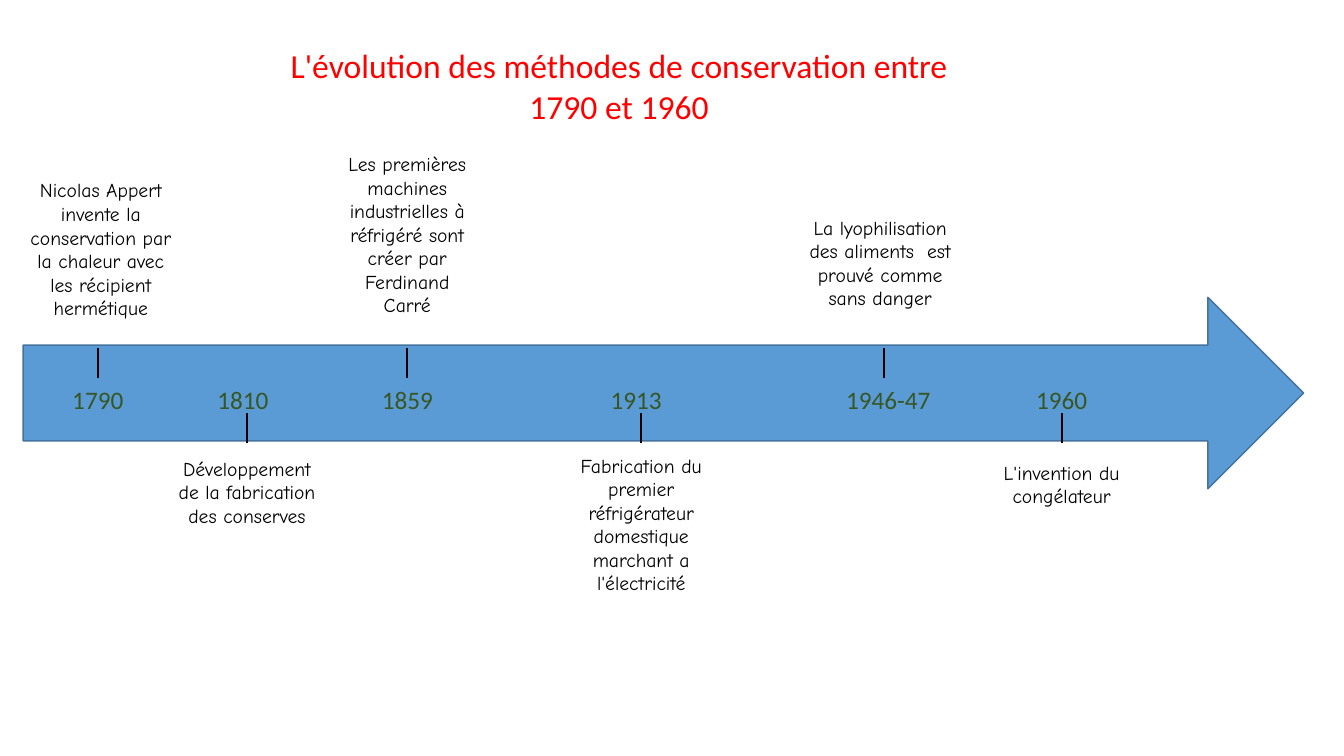
from dataclasses import dataclass

from lxml.etree import SubElement
from pptx import Presentation
from pptx.dml.color import RGBColor
from pptx.enum.shapes import MSO_CONNECTOR, MSO_SHAPE
from pptx.enum.text import MSO_ANCHOR, MSO_AUTO_SIZE, PP_ALIGN
from pptx.oxml.ns import qn
from pptx.util import Inches, Pt


@dataclass(frozen=True)
class Theme:
    title_color: RGBColor = RGBColor(0xFF, 0x00, 0x00)
    year_color: RGBColor = RGBColor(0x37, 0x56, 0x23)
    note_color: RGBColor = RGBColor(0x00, 0x00, 0x00)
    arrow_fill: RGBColor = RGBColor(0x5B, 0x9B, 0xD5)
    arrow_line: RGBColor = RGBColor(0x43, 0x73, 0x9E)
    heading_font: str = "Calibri"
    note_font: str = "Comic Neue"
    title_size: int = 24
    year_size: int = 18
    note_size: int = 14


@dataclass(frozen=True)
class Event:
    year: str
    year_center: float
    tick: float
    note_center: float
    note_top: float
    note_width: float
    note_height: float
    above: bool
    note: str


THEME = Theme()
EVENTS = [
    Event("1790", 0.97, 0.97, 1.0, 1.72, 1.62, 1.75, True,
          "Nicolas Appert invente la conservation par la chaleur avec les récipient hermétique"),
    Event("1810", 2.41, 2.45, 2.45, 4.48, 1.62, 1.04, False,
          "Développement de la fabrication des conserves"),
    Event("1859", 4.04, 4.04, 4.04, 1.46, 1.46, 1.99, True,
          "Les premières machines industrielles à réfrigéré sont créer par Ferdinand Carré"),
    Event("1913", 6.31, 6.36, 6.36, 4.45, 1.88, 1.51, False,
          "Fabrication du premier réfrigérateur domestique marchant a l'électricité"),
    Event("1946-47", 8.81, 8.77, 8.73, 2.09, 1.68, 1.28, True,
          "La lyophilisation des aliments  est prouvé comme sans danger"),
    Event("1960", 10.53, 10.53, 10.53, 4.52, 1.63, 0.57, False,
          "L'invention du congélateur"),
]


def add_text(page, box, text, font, size, color):
    shape = page.shapes.add_textbox(*(Inches(length) for length in box))
    frame = shape.text_frame
    frame.word_wrap = True
    frame.auto_size = MSO_AUTO_SIZE.SHAPE_TO_FIT_TEXT
    frame.vertical_anchor = MSO_ANCHOR.TOP
    para = frame.paragraphs[0]
    para.alignment = PP_ALIGN.CENTER
    span = para.add_run()
    span.text = text
    span.font.name = font
    span.font.size = Pt(size)
    span.font.color.rgb = color


def add_title(page, box):
    add_text(page, box, "L'évolution des méthodes de conservation entre 1790 et 1960",
             THEME.heading_font, THEME.title_size, THEME.title_color)


def add_arrow(page, box):
    arrow = page.shapes.add_shape(MSO_SHAPE.RIGHT_ARROW, *(Inches(length) for length in box))
    arrow.shadow.inherit = False
    arrow.fill.solid()
    arrow.fill.fore_color.rgb = THEME.arrow_fill
    arrow.line.color.rgb = THEME.arrow_line
    arrow.line.width = Pt(1)


def add_tick(page, x, top, length):
    tick = page.shapes.add_connector(MSO_CONNECTOR.STRAIGHT, Inches(x), Inches(top),
                                     Inches(x), Inches(top + length))
    tick.line.color.rgb = THEME.note_color
    tick.line.width = Pt(1.5)
    SubElement(tick._element.spPr, qn("a:effectLst"))


def add_event(page, event, arrow_top):
    year_width = 1.2
    add_text(page, (event.year_center - year_width / 2, arrow_top + 0.81, year_width, 0.4),
             event.year, THEME.heading_font, THEME.year_size, THEME.year_color)
    add_tick(page, event.tick, arrow_top + (0.5 if event.above else 1.15), 0.3)
    add_text(page, (event.note_center - event.note_width / 2, event.note_top,
                    event.note_width, event.note_height),
             event.note, THEME.note_font, THEME.note_size, THEME.note_color)


def add_timeline(page, box):
    add_arrow(page, box)
    for event in EVENTS:
        add_event(page, event, box[1])


def main():
    deck = Presentation()
    deck.slide_width = Inches(13.33)
    deck.slide_height = Inches(7.5)
    page = deck.slides.add_slide(deck.slide_layouts[6])
    add_timeline(page, (0.23, 2.95, 12.7, 1.9))
    add_title(page, (2.63, 0.4, 7.02, 0.91))
    deck.save("out.pptx")


if __name__ == "__main__":
    main()
